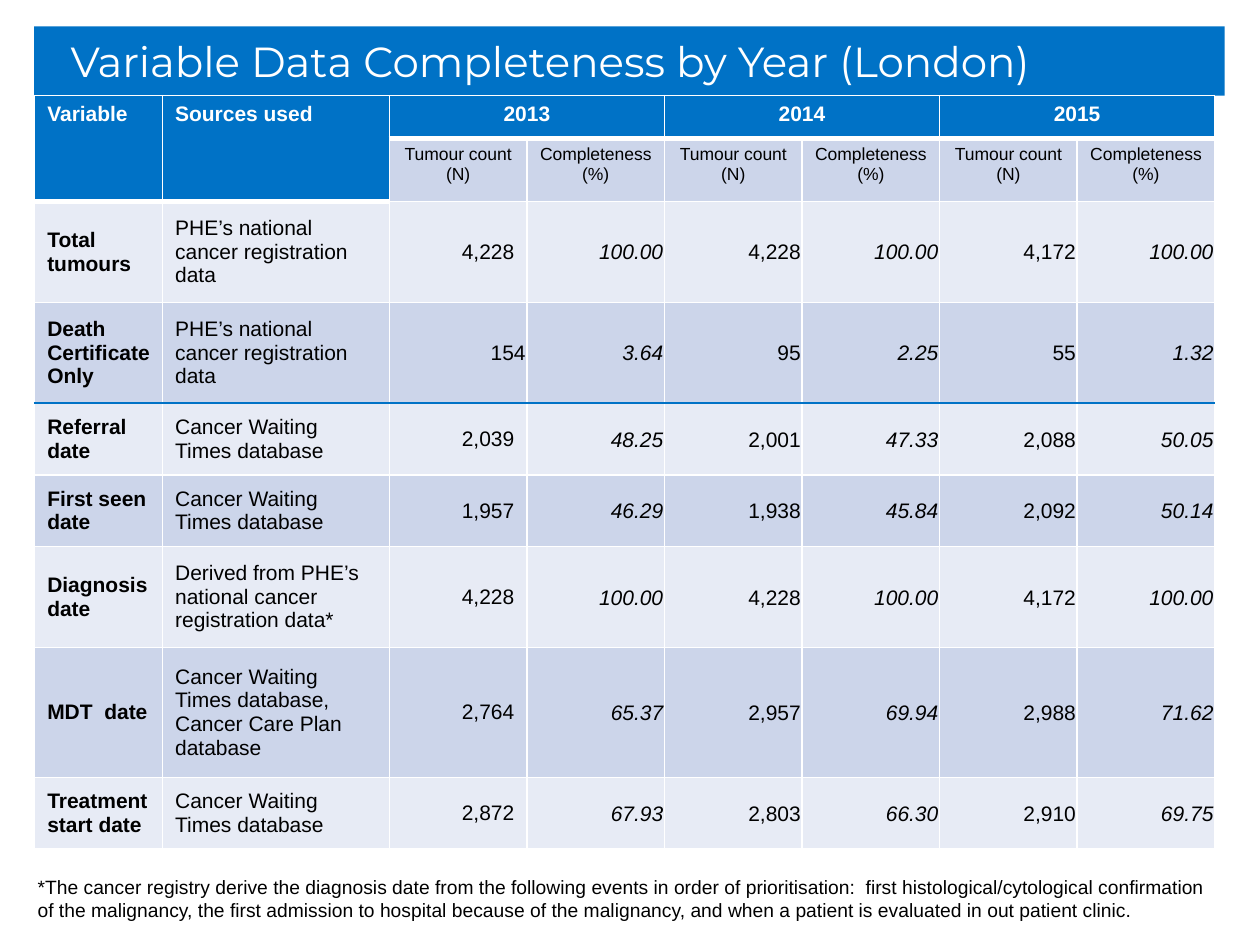
"""Build a slide with a table of variable data completeness by year."""
from dataclasses import dataclass
from typing import NamedTuple

from pptx import Presentation
from pptx.dml.color import RGBColor
from pptx.enum.text import MSO_ANCHOR, MSO_AUTO_SIZE, PP_ALIGN
from pptx.oxml import parse_xml
from pptx.oxml.ns import nsdecls
from pptx.util import Inches, Pt

COLS, ROWS = 100, 75
UNIT = Inches(0.1)
HEX = {"blue": "0072C6", "white": "FFFFFF", "black": "000000",
       "dark": "CCD5EA", "light": "E7EBF5"}
WIDTHS = [10.15, 18] + [10.92] * 6
HEIGHTS = [3.4, 5, 8, 8, 5.7, 5.7, 8, 10.3, 5.7]
HEADS = ["Variable", "Sources used"]
YEARS = ["2013", "2014", "2015"]
SPLIT = 3
REGISTRY = "PHE’s national cancer registration data"
WAITING = "Cancer Waiting Times database"


class Box(NamedTuple):
    """A place on the slide grid, in columns and rows."""
    left: float
    top: float
    width: float
    height: float

    def lengths(self) -> list[int]:
        """Return the place in slide lengths."""
        return [round(part * UNIT) for part in self]


class Entry(NamedTuple):
    """One variable with its sources and its count and share per year."""
    name: str
    source: str
    values: list[str]


@dataclass
class Style:
    """The look of a cell or text."""
    size: float = 12
    color: str = "black"
    bold: bool = False
    italic: bool = False
    align: PP_ALIGN = PP_ALIGN.LEFT
    font: str = "Arial"


@dataclass
class Edges:
    """Colour and width of the top and bottom cell borders."""
    top: tuple[str, int] = ("white", 1)
    bottom: tuple[str, int] = ("white", 1)


ENTRIES = [
    Entry("Total tumours", REGISTRY,
          ["4,228", "100.00", "4,228", "100.00", "4,172", "100.00"]),
    Entry("Death Certificate Only", REGISTRY,
          ["154", "3.64", "95", "2.25", "55", "1.32"]),
    Entry("Referral date", WAITING,
          ["2,039", "48.25", "2,001", "47.33", "2,088", "50.05"]),
    Entry("First seen date", WAITING,
          ["1,957", "46.29", "1,938", "45.84", "2,092", "50.14"]),
    Entry("Diagnosis date", "Derived from PHE’s national cancer registration data*",
          ["4,228", "100.00", "4,228", "100.00", "4,172", "100.00"]),
    Entry("MDT  date", "Cancer Waiting Times database, Cancer Care Plan database",
          ["2,764", "65.37", "2,957", "69.94", "2,988", "71.62"]),
    Entry("Treatment start date", WAITING,
          ["2,872", "67.93", "2,803", "66.30", "2,910", "69.75"]),
]
NOTE = ("*The cancer registry derive the diagnosis date from the following events "
        "in order of prioritisation:  first histological/cytological confirmation "
        "of the malignancy, the first admission to hospital because of the "
        "malignancy, and when a patient is evaluated in out patient clinic.")


def tint(name: str) -> RGBColor:
    """Look up a named colour."""
    return RGBColor.from_string(HEX[name])


def write(frame, text: str, style: Style) -> None:
    """Fill a text frame, one paragraph a line."""
    frame.text = text
    for para in frame.paragraphs:
        para.alignment = style.align
        font = para.font
        font.name, font.size = style.font, Pt(style.size)
        font.bold, font.italic = style.bold, style.italic
        font.color.rgb = tint(style.color)


def paint(cell, fill: str, edges: Edges) -> None:
    """Set the fill and the four borders of a cell."""
    cell.fill.solid()
    cell.fill.fore_color.rgb = tint(fill)
    side = ("white", 1)
    lines = {"lnL": side, "lnR": side, "lnT": edges.top, "lnB": edges.bottom}
    for spot, (tag, (color, width)) in enumerate(lines.items()):
        cell._tc.get_or_add_tcPr().insert(spot, parse_xml(
            f'<a:{tag} {nsdecls("a")} w="{Pt(width)}"><a:solidFill>'
            f'<a:srgbClr val="{HEX[color]}"/></a:solidFill></a:{tag}>'))


def head(table) -> None:
    """Fill the two heading rows."""
    thick = ("white", 3)
    for col in range(len(WIDTHS)):
        wide = col < len(HEADS)
        paint(table.cell(0, col), "blue", Edges(bottom=thick))
        paint(table.cell(1, col), "blue" if wide else "dark",
              Edges(bottom=thick) if wide else Edges(top=thick))
    for col, text in enumerate(HEADS):
        table.cell(0, col).merge(table.cell(1, col))
        write(table.cell(0, col).text_frame, text, Style(color="white", bold=True))
    for pos, year in enumerate(YEARS):
        col = len(HEADS) + 2 * pos
        table.cell(0, col).merge(table.cell(0, col + 1))
        write(table.cell(0, col).text_frame, year,
              Style(color="white", bold=True, align=PP_ALIGN.CENTER))
        for step, text in enumerate(["Tumour count\n(N)", "Completeness (%)"]):
            write(table.cell(1, col + step).text_frame, text,
                  Style(size=10, align=PP_ALIGN.CENTER))


def body(table) -> None:
    """Fill one row for each variable."""
    rule = ("blue", 1)
    for row, entry in enumerate(ENTRIES, 2):
        edges = {SPLIT: Edges(bottom=rule), SPLIT + 1: Edges(top=rule)}.get(row, Edges())
        for col, text in enumerate([entry.name, entry.source, *entry.values]):
            cell = table.cell(row, col)
            number = col >= len(HEADS)
            write(cell.text_frame, text, Style(
                bold=col == 0, italic=number and col % 2 == 1,
                align=PP_ALIGN.RIGHT if number else PP_ALIGN.LEFT))
            cell.vertical_anchor = MSO_ANCHOR.MIDDLE
            if col > len(HEADS) or (number and row == SPLIT):
                cell.margin_left = cell.margin_right = cell.margin_top = Inches(0.01)
                cell.margin_bottom = 0
            paint(cell, "dark" if row % 2 else "light", edges)


def grid(slide, box: Box) -> None:
    """Draw the table."""
    table = slide.shapes.add_table(len(HEIGHTS), len(WIDTHS), *box.lengths()).table
    table.first_row = table.horz_banding = False
    for col, width in zip(table.columns, WIDTHS):
        col.width = round(width * UNIT)
    for row, height in zip(table.rows, HEIGHTS):
        row.height = round(height * UNIT)
    head(table)
    body(table)


def banner(slide, box: Box) -> None:
    """Place and format the title."""
    title = slide.shapes.title
    title.left, title.top, title.width, title.height = box.lengths()
    title.fill.solid()
    title.fill.fore_color.rgb = tint("blue")
    frame = title.text_frame
    write(frame, "Variable Data Completeness by Year (London)",
          Style(size=24, color="white", font="Montserrat"))
    frame.auto_size = MSO_AUTO_SIZE.NONE
    frame.vertical_anchor = MSO_ANCHOR.MIDDLE
    para = frame.paragraphs[0]
    para.space_before = Pt(6)
    para._p.get_or_add_pPr().set("marL", str(Inches(0.19)))


def note(slide, box: Box) -> None:
    """Add the footnote."""
    frame = slide.shapes.add_textbox(*box.lengths()).text_frame
    frame.word_wrap = True
    write(frame, NOTE, Style(size=11))


def main() -> None:
    """Build and save the slide."""
    deck = Presentation()
    deck.slide_width, deck.slide_height = COLS * UNIT, ROWS * UNIT
    slide = deck.slides.add_slide(deck.slide_layouts[5])
    banner(slide, Box(2.7, 2.1, 94.5, 5.5))
    grid(slide, Box(2.75, 7.6, sum(WIDTHS), sum(HEIGHTS)))
    note(slide, Box(2, 69, 95.3, 4.7))
    deck.save("out.pptx")


if __name__ == "__main__":
    main()
